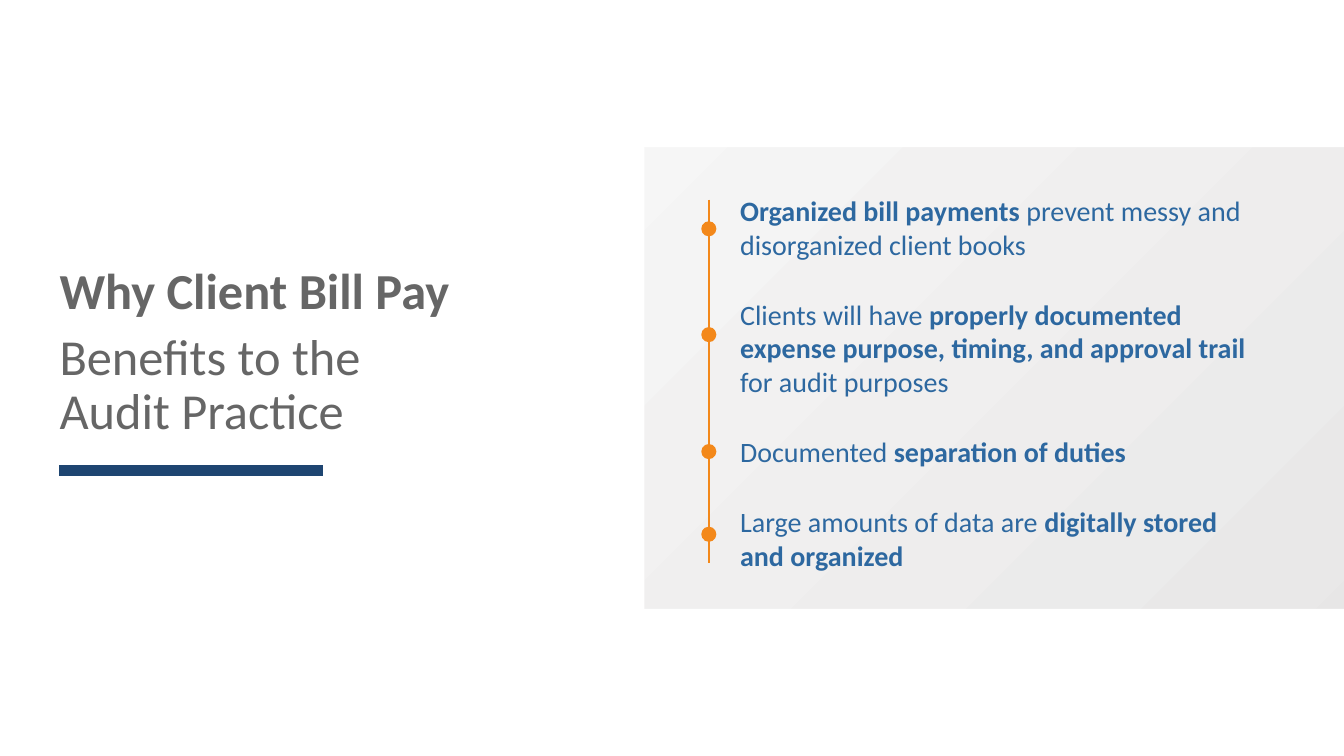
import pptx
import pptx.util
import pptx.dml.color
import pptx.enum.shapes
import pptx.enum.text
import lxml.etree

Inches = pptx.util.Inches
Pt = pptx.util.Pt
Shape = pptx.enum.shapes.MSO_SHAPE
WIDTH, HEIGHT = 13.33, 7.5
BAND = 1.46
SPLIT = 6.39
RAIL = 7.03
DOT = 0.15


def color(value):
    return pptx.dml.color.RGBColor.from_string(value)


def add_text(para, text, size=20, fill="2D68A0", bold=False):
    span = para.add_run()
    span.text = text
    span.font.name = "Calibri"
    span.font.size = Pt(size)
    span.font.bold = bold
    span.font.color.rgb = color(fill)


deck = pptx.Presentation()
deck.slide_width, deck.slide_height = Inches(WIDTH), Inches(HEIGHT)
page = deck.slides.add_slide(deck.slide_layouts[1])
title, body = page.shapes.title, page.placeholders[1]

backdrop = page.shapes.add_shape(Shape.RECTANGLE, 0, 0, deck.slide_width, deck.slide_height)
backdrop.shadow.inherit = False
backdrop.line.fill.background()
backdrop.fill.gradient()
backdrop.fill.gradient_angle = 135
for stop, shade, position in zip(backdrop.fill.gradient_stops, ("E7E6E6", "FFFFFF"), (0, 1)):
    stop.color.rgb = color(shade)
    stop.position = position

solids = [
    (Shape.RECTANGLE, 0, 0, SPLIT, HEIGHT, "FFFFFF"),
    (Shape.RECTANGLE, 0, 0, WIDTH, BAND, "FFFFFF"),
    (Shape.RECTANGLE, 0, HEIGHT - BAND, WIDTH, BAND, "FFFFFF"),
]
for middle in (2.27, 3.32, 4.48, 5.3):
    solids.append((Shape.OVAL, RAIL - DOT / 2, middle - DOT / 2, DOT, DOT, "F3881A"))
for kind, left, top, width, height, fill in solids:
    shape = page.shapes.add_shape(kind, Inches(left), Inches(top), Inches(width), Inches(height))
    shape.shadow.inherit = False
    shape.fill.solid()
    shape.fill.fore_color.rgb = color(fill)
    shape.line.fill.background()

rules = [
    (RAIL, 1.98, RAIL, 5.59, "F3881A", 1.25),
    (0.59, 4.67, 3.2, 4.67, "1E4571", 7.5),
]
for x1, y1, x2, y2, fill, weight in rules:
    rule = page.shapes.add_connector(
        pptx.enum.shapes.MSO_CONNECTOR.STRAIGHT, Inches(x1), Inches(y1), Inches(x2), Inches(y2))
    rule.line.color.rgb = color(fill)
    rule.line.width = Pt(weight)
    lxml.etree.SubElement(rule.element.spPr, pptx.oxml.ns.qn("a:effectLst"))

title_lines = [[("Why Client Bill Pay", True)], [("Benefits to the\vAudit Practice", False)]]
benefits = [
    [("Organized bill payments ", True), ("prevent messy and disorganized client books", False)],
    [("Clients will have ", False),
     ("properly documented expense purpose, timing, and approval trail ", True),
     ("for audit purposes", False)],
    [("Documented ", False), ("separation of duties", True)],
    [("Large amounts of data are ", False), ("digitally stored and organized", True)],
]
Anchor = pptx.enum.text.MSO_ANCHOR
blocks = [
    (title, (0.49, 1.92, 5.9, 2.5), Anchor.BOTTOM, title_lines, 0.9, 0, 8, 36, "666666"),
    (body, (7.24, 1.87, 5.28, 3.85), Anchor.TOP, benefits, 1, 26, 0, 20, "2D68A0"),
]
for box, place, anchor, lines, spacing, before, after, size, fill in blocks:
    box.left, box.top, box.width, box.height = map(Inches, place)
    box.element.getparent().append(box.element)
    frame = box.text_frame
    frame.word_wrap = True
    frame.auto_size = pptx.enum.text.MSO_AUTO_SIZE.NONE
    frame.vertical_anchor = anchor
    for index, line in enumerate(lines):
        para = frame.add_paragraph() if index else frame.paragraphs[0]
        para.alignment = pptx.enum.text.PP_ALIGN.LEFT
        para.line_spacing = spacing
        para.space_before = Pt(before if index else 0)
        para.space_after = Pt(after)
        properties = para._p.get_or_add_pPr()
        properties.set("marL", "0")
        properties.set("indent", "0")
        lxml.etree.SubElement(properties, pptx.oxml.ns.qn("a:buNone"))
        for text, bold in line:
            for part, piece in enumerate(text.split("\v")):
                if part:
                    para.add_line_break()
                add_text(para, piece, size=size, fill=fill, bold=bold)

deck.save("out.pptx")
